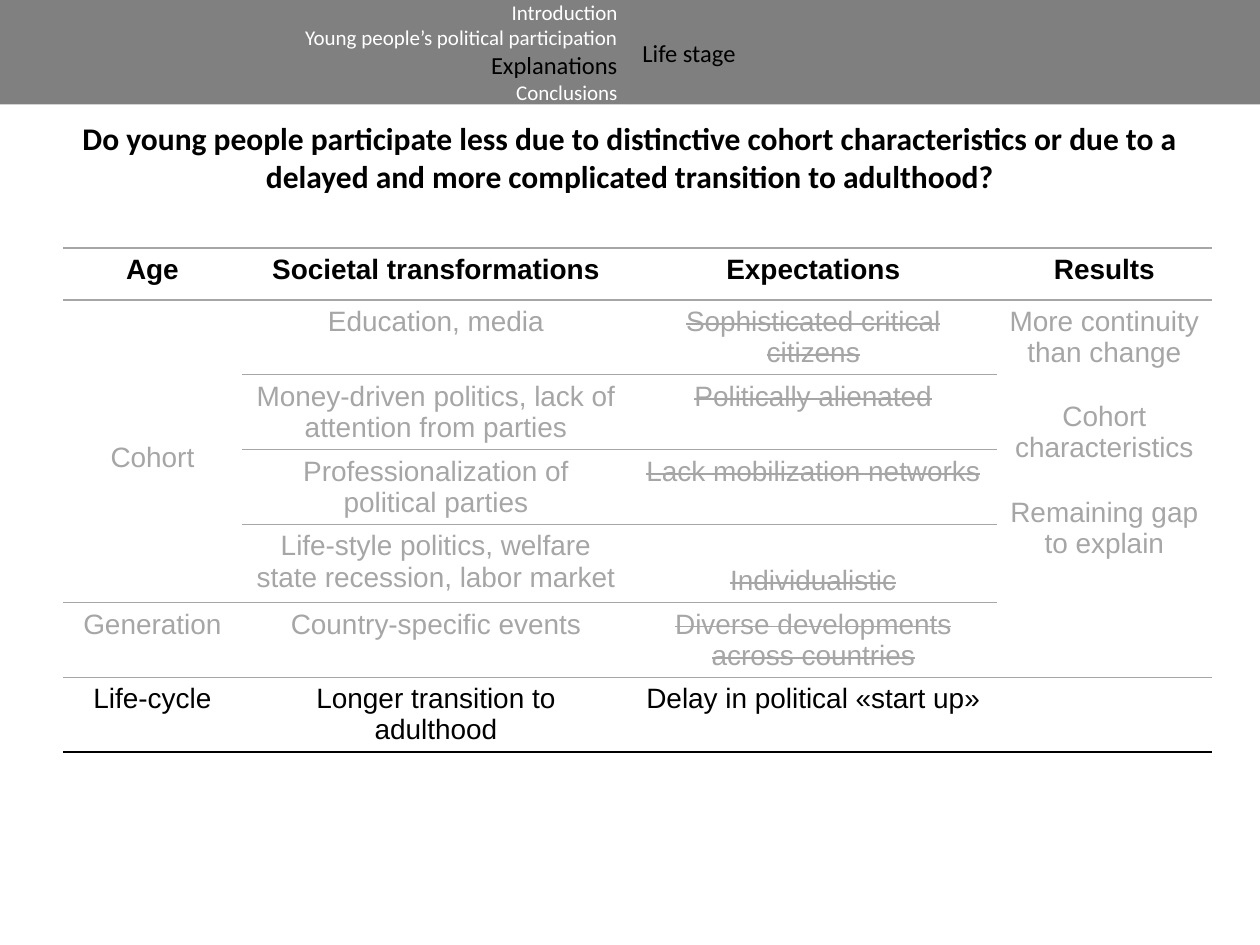
from lxml.etree import SubElement
from pptx import Presentation
from pptx.dml.color import RGBColor
from pptx.enum.shapes import MSO_SHAPE as Shape
from pptx.enum.text import MSO_ANCHOR as Anchor, PP_ALIGN as Align
from pptx.oxml.ns import qn
from pptx.util import Inches, Pt

BLACK = RGBColor(0x00, 0x00, 0x00)
WHITE = RGBColor(0xFF, 0xFF, 0xFF)
MUTED = RGBColor(0xA6, 0xA6, 0xA6)
LEFT_BAND = RGBColor(0x80, 0x80, 0x80)
RIGHT_BAND = RGBColor(0x7F, 0x7F, 0x7F)

TITLE = ("Do young people participate less due to distinctive cohort characteristics "
         "or due to a delayed and more complicated transition to adulthood?")
SECTIONS = ["Introduction", "Young people’s political participation", "Explanations", "Conclusions"]
CURRENT_SECTION = "Explanations"
RESULTS = ["More continuity than change", "Cohort characteristics", "Remaining gap to explain"]
ROWS = [
    ["Age", "Societal transformations", "Expectations", "Results"],
    ["Cohort", "Education, media", "Sophisticated critical citizens", RESULTS],
    ["", "Money-driven politics, lack of attention from parties", "Politically alienated", ""],
    ["", "Professionalization of political parties", "Lack mobilization networks", ""],
    ["", "Life-style politics, welfare state recession, labor market", "Individualistic", ""],
    ["Generation", "Country-specific events", "Diverse developments across countries", ""],
    ["Life-cycle", "Longer transition to adulthood", "Delay in political «start up»", ""],
]
COLUMN_WIDTHS = [1.42, 3.08, 2.91, 1.71]
ROW_HEIGHTS = [0.41, 0.59, 0.59, 0.59, 0.62, 0.59, 0.59]
HEADER_ROW, INDIVIDUALISTIC_ROW, LAST_ROW = 0, 4, 6
EXPECTATIONS_COLUMN = 2


def write_paragraph(paragraph, text, font, align, strike=False):
    """Write one formatted run into a paragraph."""
    paragraph.alignment = align
    run = paragraph.add_run()
    run.text = text
    values = dict(font)
    run.font.color.rgb = values.pop("color")
    for name, value in values.items():
        setattr(run.font, name, value)
    if strike:
        run.font._element.set("strike", "sngStrike")


def write_lines(frame, lines, align, gap=0):
    """Write (text, font, strike) lines as paragraphs of a text frame."""
    for index, (text, font, strike) in enumerate(lines):
        paragraph = frame.add_paragraph() if index else frame.paragraphs[0]
        write_paragraph(paragraph, text, font, align, strike)
        if index and gap:
            paragraph.space_before = Pt(gap)


def add_band(slide, left, fill, lines, align):
    """Add one half of the navigation header."""
    band = slide.shapes.add_shape(Shape.RECTANGLE, Inches(left), 0, Inches(5), Inches(0.83))
    band.shadow.inherit = False
    band.fill.solid()
    band.fill.fore_color.rgb = fill
    band.line.fill.background()
    band.text_frame.vertical_anchor = Anchor.MIDDLE
    write_lines(band.text_frame, lines, align)


def section_line(text):
    """Return a header line, with the current section emphasised."""
    current = text == CURRENT_SECTION
    font = {"name": "Calibri", "size": Pt(14 if current else 12),
            "color": BLACK if current else WHITE}
    return text, font, False


def set_borders(cell, top, bottom):
    """Rule a cell above and below, leaving its sides open."""
    properties = cell._tc.get_or_add_tcPr()
    edges = [("a:lnL", None), ("a:lnR", None), ("a:lnT", top), ("a:lnB", bottom)]
    for position, (tag, color) in enumerate(edges):
        line = SubElement(properties, qn(tag), w=str(Pt(1)))
        properties.insert(position, line)
        if color is None:
            SubElement(line, qn("a:noFill"))
        else:
            fill = SubElement(line, qn("a:solidFill"))
            SubElement(fill, qn("a:srgbClr"), val=str(color))


def fill_cell(cell, row, column, content):
    """Write and format one table cell."""
    cell.fill.background()
    set_borders(cell, MUTED, BLACK if row == LAST_ROW else MUTED)
    if not content:
        return
    font = {"name": "Arial", "size": Pt(16), "bold": row == HEADER_ROW,
            "color": BLACK if row in (HEADER_ROW, LAST_ROW) else MUTED}
    strike = column == EXPECTATIONS_COLUMN and HEADER_ROW < row < LAST_ROW
    texts = content if isinstance(content, list) else [content]
    write_lines(cell.text_frame, [(text, font, strike) for text in texts], Align.CENTER, gap=19)


def add_explanations_table(slide):
    """Add the table of explanations, expectations and results."""
    frame = slide.shapes.add_table(len(ROWS), len(COLUMN_WIDTHS), Inches(0.5), Inches(1.97),
                                   Inches(sum(COLUMN_WIDTHS)), Inches(sum(ROW_HEIGHTS)))
    table = frame.table
    table.horz_banding = False
    table.first_row = False
    for column, width in zip(table.columns, COLUMN_WIDTHS):
        column.width = Inches(width)
    for row, height in zip(table.rows, ROW_HEIGHTS):
        row.height = Inches(height)
    for row, contents in enumerate(ROWS):
        for column, content in enumerate(contents):
            fill_cell(table.cell(row, column), row, column, content)
    table.cell(1, 0).merge(table.cell(4, 0))
    table.cell(1, 3).merge(table.cell(5, 3))
    table.cell(1, 0).margin_top = Inches(1.13)
    table.cell(INDIVIDUALISTIC_ROW, EXPECTATIONS_COLUMN).vertical_anchor = Anchor.BOTTOM


def set_title(slide):
    """Place and format the slide title."""
    title = slide.shapes.title
    box = {"left": 0.5, "top": 0.83, "width": 9, "height": 0.83}
    for name, value in box.items():
        setattr(title, name, Inches(value))
    title.text_frame.vertical_anchor = Anchor.MIDDLE
    font = {"name": "Calibri", "size": Pt(18), "bold": True, "color": BLACK}
    write_paragraph(title.text_frame.paragraphs[0], TITLE, font, Align.CENTER)


def main():
    """Build and save the slide."""
    presentation = Presentation()
    presentation.slide_width = Inches(10)
    presentation.slide_height = Inches(7.5)
    slide = presentation.slides.add_slide(presentation.slide_layouts[5])
    set_title(slide)
    add_explanations_table(slide)
    topic_font = {"name": "Calibri", "size": Pt(14), "color": BLACK}
    add_band(slide, 5, RIGHT_BAND, [("Life stage", topic_font, False)], Align.LEFT)
    add_band(slide, 0, LEFT_BAND, [section_line(text) for text in SECTIONS], Align.RIGHT)
    presentation.save("out.pptx")


if __name__ == "__main__":
    main()
